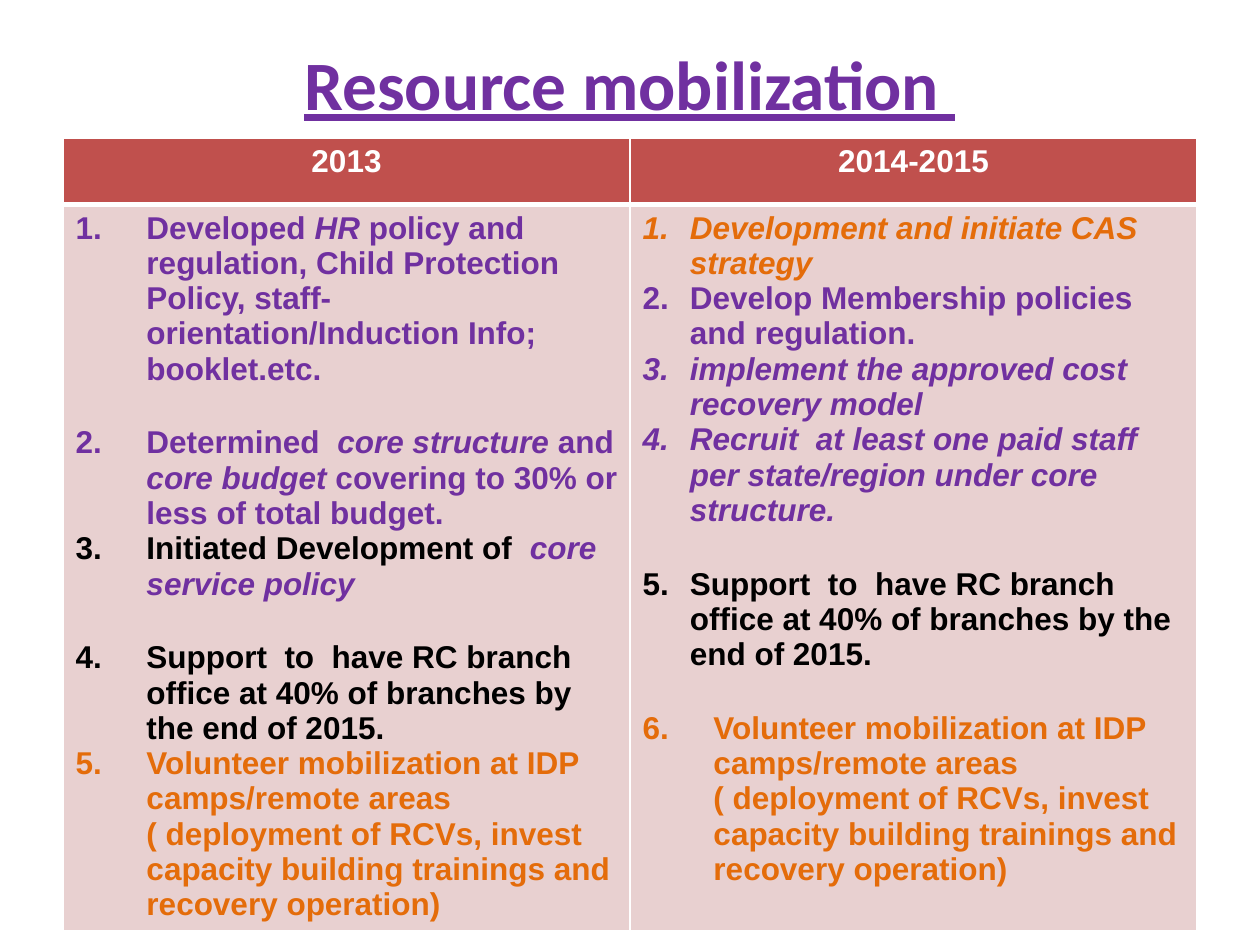
from lxml.etree import SubElement
from pptx import Presentation
from pptx.dml.color import RGBColor
from pptx.enum.text import MSO_ANCHOR, PP_ALIGN
from pptx.oxml.ns import qn
from pptx.util import Pt

COLORS = {"purple": "7030A0", "orange": "E46C0A", "black": "000000",
          "white": "FFFFFF", "header": "C0504D", "body": "E8D0D0"}
WIDE, NARROW = 40.5, 27  # hanging indents
GAP = 22  # space before a new group of points


def add_run(paragraph, text, color, italic=False, size=18, name="Arial"):
    run = paragraph.add_run()
    run.text = text
    run.font.size = Pt(size)
    run.font.name = name
    run.font.bold = True
    run.font.italic = italic
    run.font.color.rgb = RGBColor.from_string(COLORS[color])
    return run


def style_cell(cell, fill, bottom_width):
    cell_props = cell._tc.get_or_add_tcPr()
    for side, width in (("L", 1), ("R", 1), ("T", 1), ("B", bottom_width)):
        border = SubElement(cell_props, qn(f"a:ln{side}"), w=str(Pt(width)))
        border_fill = SubElement(border, qn("a:solidFill"))
        SubElement(border_fill, qn("a:srgbClr"), val=COLORS["white"])
    cell.fill.solid()
    cell.fill.fore_color.rgb = RGBColor.from_string(COLORS[fill])


prs = Presentation()
prs.slide_width, prs.slide_height = Pt(720), Pt(540)
slide = prs.slides.add_slide(prs.slide_layouts[5])

# Title
title = slide.shapes.title
title.left, title.top, title.width, title.height = Pt(36), Pt(21.6), Pt(648), Pt(51.84)
title.text_frame.vertical_anchor = MSO_ANCHOR.MIDDLE
heading = title.text_frame.paragraphs[0]
heading.alignment = PP_ALIGN.CENTER
add_run(heading, "Resource mobilization ", "purple", size=39.6, name="Calibri").font.underline = True

# Points shared by both years
branch_office = [("Support  to  have RC branch office at 40% of branches by the end of 2015.", "black", False)]
volunteers = [("Volunteer mobilization at IDP camps/remote areas", "orange", False)]
deployment = [("( deployment of RCVs, invest capacity building trainings and recovery operation)", "orange", False)]

# Each point: number (None continues the one above), indent, space before, runs
points_by_year = {
    "2013": [
        (1, WIDE, 0, [("Developed ", "purple", False), ("HR ", "purple", True),
                      ("policy and regulation, Child Protection Policy, staff- "
                       "orientation/Induction Info; booklet.etc.", "purple", False)]),
        (2, WIDE, GAP, [("Determined  ", "purple", False), ("core structure ", "purple", True),
                        ("and ", "purple", False), ("core budget ", "purple", True),
                        ("covering to 30% or less of total budget.", "purple", False)]),
        (3, WIDE, 0, [("Initiated Development of  ", "black", False),
                      ("core service policy", "purple", True)]),
        (4, WIDE, GAP, branch_office),
        (5, WIDE, 0, volunteers),
        (None, WIDE, 0, deployment),
    ],
    "2014-2015": [
        (1, NARROW, 0, [("Development and initiate CAS  strategy", "orange", True)]),
        (2, NARROW, 0, [("Develop Membership policies and regulation.", "purple", False)]),
        (3, NARROW, 0, [("implement the approved cost recovery model", "purple", True)]),
        (4, NARROW, 0, [("Recruit  at least one paid staff per state/region under core structure.",
                         "purple", True)]),
        (5, NARROW, GAP, branch_office),
        (6, WIDE, GAP, volunteers),
        (None, WIDE, 0, deployment),
    ],
}

# Table
table = slide.shapes.add_table(2, 2, Pt(36), Pt(78.75), Pt(648), Pt(455)).table
table.rows[0].height, table.rows[1].height = Pt(38), Pt(415)

for column, (year, points) in enumerate(points_by_year.items()):
    table.columns[column].width = Pt(324)
    header, body = table.cell(0, column), table.cell(1, column)
    style_cell(header, "header", 3)
    style_cell(body, "body", 1)

    year_line = header.text_frame.paragraphs[0]
    year_line.alignment = PP_ALIGN.CENTER
    add_run(year_line, year, "white")

    # Numbered points
    for index, (number, indent, space_before, runs) in enumerate(points):
        point = body.text_frame.paragraphs[0] if index == 0 else body.text_frame.add_paragraph()
        point.space_before = Pt(space_before)
        point_props = point._p.get_or_add_pPr()
        point_props.set("marL", str(Pt(indent)))
        point_props.set("indent", str(-Pt(indent) if number else 0))
        if number:
            numbering = SubElement(point_props, qn("a:buAutoNum"), type="arabicPeriod")
            if index and indent != points[index - 1][1]:
                numbering.set("startAt", str(number))
        for text, color, italic in runs:
            add_run(point, text, color, italic)

prs.save("out.pptx")
